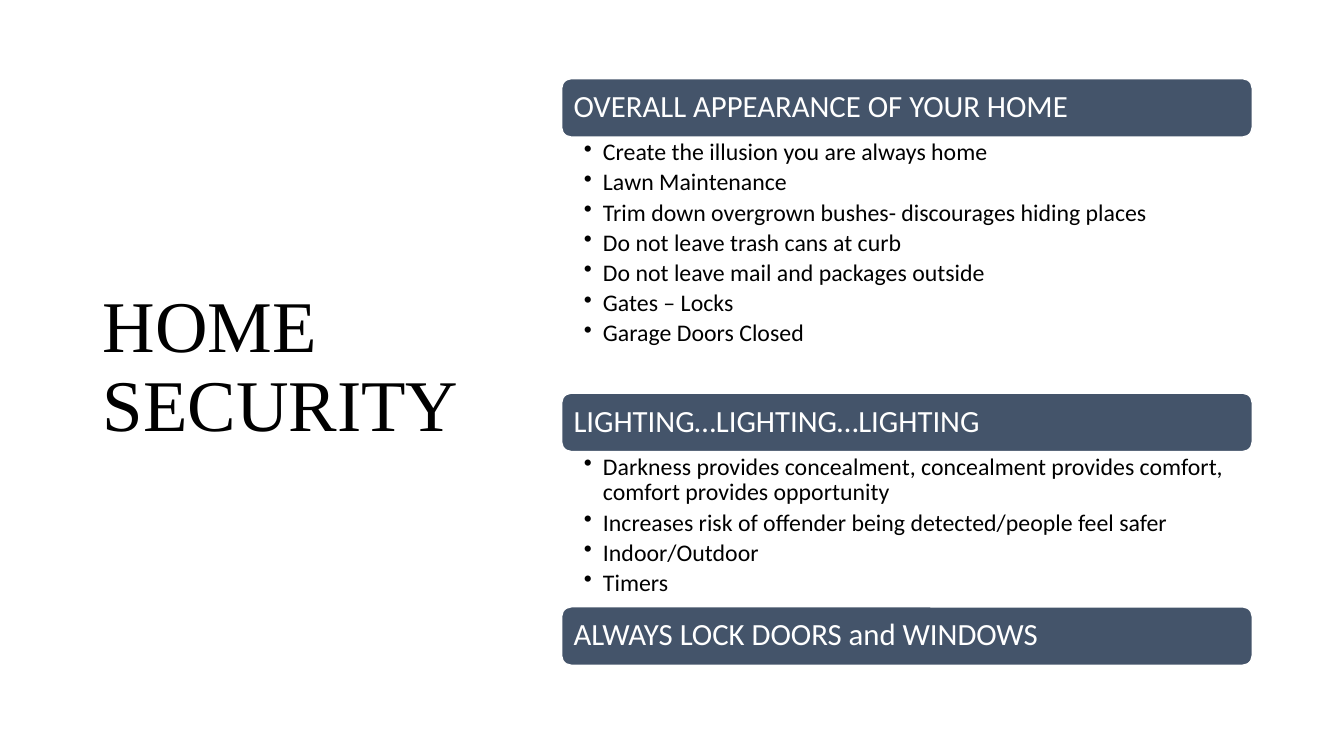
from lxml import etree
from pptx import Presentation
from pptx import util as u
from pptx.dml.color import RGBColor
from pptx.enum import shapes, text
from pptx.oxml.ns import qn

TITLE = "HOME SECURITY"
# heading, bullets, height of the bullet area in px
SECTIONS = [
    ("OVERALL APPEARANCE OF YOUR HOME", [
        "Create the illusion you are always home",
        "Lawn Maintenance",
        "Trim down overgrown bushes- discourages hiding places",
        "Do not leave trash cans at curb",
        "Do not leave mail and packages outside",
        "Gates – Locks",
        "Garage Doors Closed",
    ], 254),
    ("LIGHTING…LIGHTING…LIGHTING", [
        "Darkness provides concealment, concealment provides comfort, "
        "comfort provides opportunity",
        "Increases risk of offender being detected/people feel safer",
        "Indoor/Outdoor",
        "Timers",
    ], 154),
    ("ALWAYS LOCK DOORS and WINDOWS", [], 0),
]
BLACK, WHITE, SLATE = "000000", "FFFFFF", "44546A"
LEFT, TOP, WIDTH, BAR_HEIGHT = 557, 78, 685, 58
INDENT = 19


def px(n):
    """Convert px, at 100 to the inch, to EMU."""
    return u.Emu(n * 9144)


def color(value):
    return RGBColor.from_string(value)


def setup_frame(tf, anchor, insets):
    tf.word_wrap = True
    tf.auto_size = text.MSO_AUTO_SIZE.NONE
    tf.vertical_anchor = anchor
    tf.margin_left, tf.margin_top, tf.margin_right, tf.margin_bottom = map(px, insets)


def write(p, words, size, font, hue):
    p.alignment = text.PP_ALIGN.LEFT
    p.line_spacing = 0.9
    r = p.add_run()
    r.text = words
    r.font.size = u.Pt(size)
    r.font.name = font
    r.font.color.rgb = color(hue)


def add_bullet(p):
    pPr = p._p.get_or_add_pPr()
    pPr.set("marL", str(px(INDENT)))
    pPr.set("indent", str(-px(INDENT)))
    etree.SubElement(pPr, qn("a:buChar")).set("char", "•")


def add_bar(s, top, heading):
    sp = s.shapes.add_shape(shapes.MSO_SHAPE.ROUNDED_RECTANGLE,
                            px(LEFT), px(top), px(WIDTH), px(BAR_HEIGHT))
    sp.shadow.inherit = False
    sp.fill.solid()
    sp.fill.fore_color.rgb = color(SLATE)
    sp.line.color.rgb = color(WHITE)
    sp.line.width = u.Pt(1)
    setup_frame(sp.text_frame, text.MSO_ANCHOR.MIDDLE, (9, 9, 9, 9))
    write(sp.text_frame.paragraphs[0], heading, 22, "Calibri", WHITE)


def add_bullets(s, top, height, bullets):
    sp = s.shapes.add_textbox(px(LEFT), px(top), px(WIDTH), px(height))
    tf = sp.text_frame
    setup_frame(tf, text.MSO_ANCHOR.TOP, (22, 3, 17, 3))
    for i, words in enumerate(bullets):
        p = tf.add_paragraph() if i else tf.paragraphs[0]
        p.level = 1
        write(p, words, 17, "Calibri", BLACK)
        p.space_before = u.Pt(0)
        p.space_after = u.Pt(3.2)
        add_bullet(p)


def main():
    prs = Presentation()
    prs.slide_width, prs.slide_height = px(1333), px(750)
    s = prs.slides.add_slide(prs.slide_layouts[5])

    title = s.shapes.title
    title.left, title.top, title.width, title.height = map(px, (92, 61, 399, 609))
    setup_frame(title.text_frame, text.MSO_ANCHOR.MIDDLE, (10, 5, 10, 5))
    write(title.text_frame.paragraphs[0], TITLE, 52, "Times New Roman", BLACK)

    top = TOP
    for heading, bullets, height in SECTIONS:
        add_bar(s, top, heading)
        top += BAR_HEIGHT
        if bullets:
            add_bullets(s, top, height, bullets)
        top += height

    prs.save("out.pptx")


if __name__ == "__main__":
    main()
